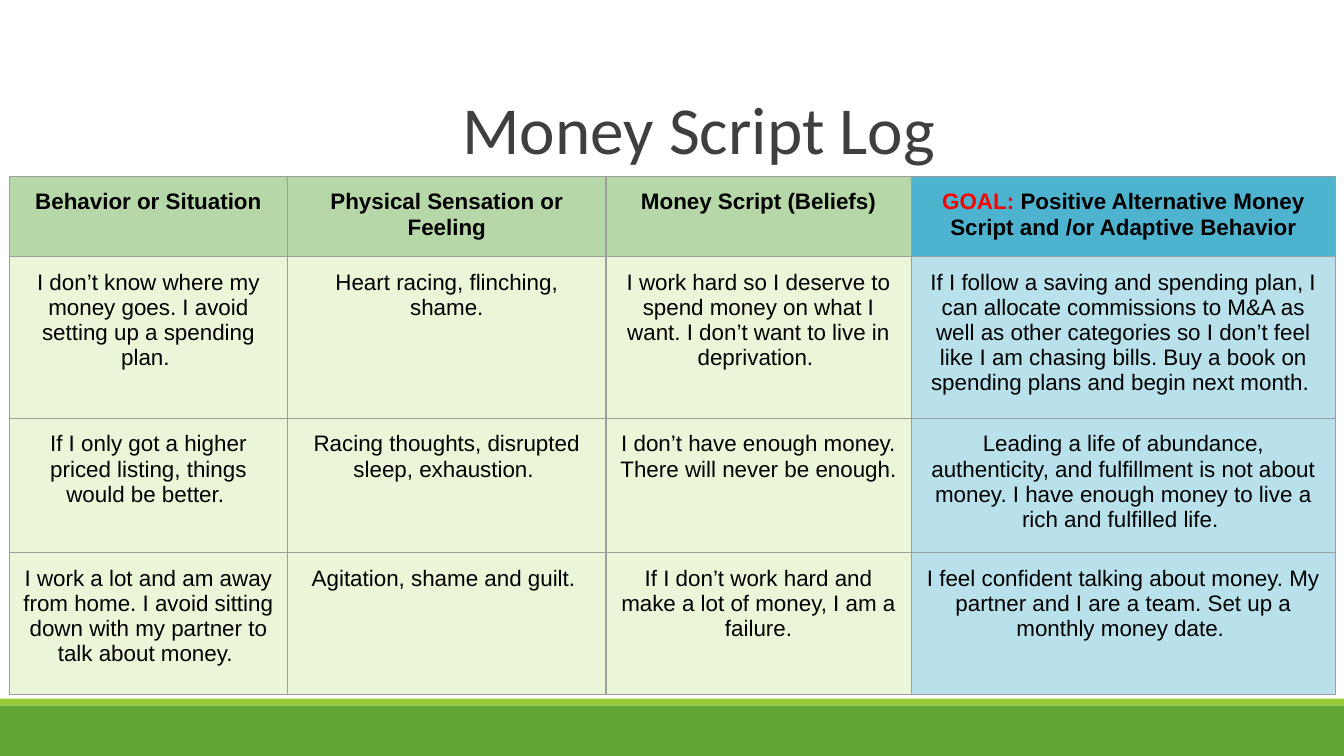
from dataclasses import dataclass

from lxml import etree
from pptx import Presentation
from pptx.dml.color import RGBColor
from pptx.enum.shapes import MSO_SHAPE
from pptx.enum.text import MSO_ANCHOR, PP_ALIGN
from pptx.oxml.ns import qn
from pptx.slide import Slide
from pptx.util import Inches, Length, Pt

RECTANGLE = MSO_SHAPE.RECTANGLE
TOP = MSO_ANCHOR.TOP
CENTER = PP_ALIGN.CENTER

SLIDE_WIDTH, SLIDE_HEIGHT = Inches(10), Inches(5.625)
INSET = Inches(0.1)


@dataclass(frozen=True)
class Theme:
    title_font: str = "Calibri"
    table_font: str = "Arial"
    title_size: int = 36
    table_size: int = 12
    border_width: float = 0.75
    title: str = "3F3F3F"
    ink: str = "000000"
    goal: str = "FF0000"
    border: str = "9E9E9E"
    header: str = "B6D7A8"
    goal_header: str = "4EB3CF"
    entry: str = "EBF5D7"
    goal_entry: str = "B8E1EC"
    band: str = "63A537"
    stripe: str = "99CB38"


@dataclass(frozen=True)
class Area:
    """A place given in percent of the slide's width and height."""
    left: float
    top: float
    width: float
    height: float

    def box(self) -> tuple[Length, Length, Length, Length]:
        return (across(self.left), down(self.top),
                across(self.width), down(self.height))


@dataclass(frozen=True)
class Words:
    text: str
    color: str
    bold: bool = False


THEME = Theme()

# Percent of the slide's width for columns and of its height for rows
COLUMNS = (20.7, 23.7, 22.7, 31.6)
ROWS = (10, 20.1, 16.8, 18.8)
LOG_AREA = Area(0.7, 23.3, sum(COLUMNS), sum(ROWS))
TITLE_AREA = Area(5.4, 11.4, 93.2, 9.1)
FOOTER = (
    (Area(0, 93.3, 100, 6.7), THEME.band),
    (Area(0, 92.4, 100, 0.9), THEME.stripe),
)

HEADINGS = (
    "Behavior or Situation",
    "Physical Sensation or Feeling",
    "Money Script (Beliefs)",
    "Positive Alternative Money Script and /or Adaptive Behavior",
)
ENTRIES = (
    (
        "I don’t know where my money goes. I avoid setting up a spending plan. ",
        "Heart racing, flinching, shame.",
        "I work hard so I deserve to spend money on what I want. "
        "I don’t want to live in deprivation. ",
        "If I follow a saving and spending plan, I can allocate commissions to "
        "M&A as well as other categories so I don’t feel like I am chasing "
        "bills. Buy a book on spending plans and begin next month. ",
    ),
    (
        "If I only got a higher priced listing, things would be better. ",
        "Racing thoughts, disrupted sleep, exhaustion. ",
        "I don’t have enough money. There will never be enough. ",
        "Leading a life of abundance, authenticity, and fulfillment is not about "
        "money. I have enough money to live a rich and fulfilled life. ",
    ),
    (
        "I work a lot and am away from home. I avoid sitting down with my "
        "partner to talk about money. ",
        "Agitation, shame and guilt. ",
        "If I don’t work hard and make a lot of money, I am a failure.",
        "I feel confident talking about money. My partner and I are a team. "
        "Set up a monthly money date. ",
    ),
)


def across(percent: float) -> Length:
    return Length(round(SLIDE_WIDTH * percent / 100))


def down(percent: float) -> Length:
    return Length(round(SLIDE_HEIGHT * percent / 100))


def write(frame, words: list[Words], font: str, size: int) -> None:
    frame.word_wrap = True
    paragraph = frame.paragraphs[0]
    paragraph.alignment = CENTER
    for part in words:
        run = paragraph.add_run()
        run.text = part.text
        run.font.name = font
        run.font.size = Pt(size)
        run.font.bold = part.bold
        run.font.color.rgb = RGBColor.from_string(part.color)


def draw_bar(slide: Slide, area: Area, color: str) -> None:
    bar = slide.shapes.add_shape(RECTANGLE, *area.box())
    bar.shadow.inherit = False
    bar.fill.solid()
    bar.fill.fore_color.rgb = RGBColor.from_string(color)
    bar.line.fill.background()


def draw_title(slide: Slide, text: str) -> None:
    frame = slide.shapes.add_textbox(*TITLE_AREA.box()).text_frame
    frame.margin_left = frame.margin_right = INSET
    frame.margin_top = frame.margin_bottom = INSET
    frame.vertical_anchor = TOP
    write(frame, [Words(text, THEME.title)], THEME.title_font, THEME.title_size)
    frame.paragraphs[0].line_spacing = 0.85


def add_borders(cell) -> None:
    properties = cell._tc.get_or_add_tcPr()
    for side in ("a:lnL", "a:lnR", "a:lnT", "a:lnB"):
        edge = etree.SubElement(properties, qn(side), w=str(Pt(THEME.border_width)))
        fill = etree.SubElement(edge, qn("a:solidFill"))
        etree.SubElement(fill, qn("a:srgbClr"), val=THEME.border)


def fill_cell(cell, words: list[Words], color: str) -> None:
    cell.margin_left = cell.margin_right = INSET
    cell.margin_top = cell.margin_bottom = INSET
    cell.vertical_anchor = TOP
    add_borders(cell)
    cell.fill.solid()
    cell.fill.fore_color.rgb = RGBColor.from_string(color)
    write(cell.text_frame, words, THEME.table_font, THEME.table_size)


def draw_log(slide: Slide) -> None:
    log = slide.shapes.add_table(len(ROWS), len(COLUMNS), *LOG_AREA.box()).table
    for column, share in zip(log.columns, COLUMNS):
        column.width = across(share)
    for row, share in zip(log.rows, ROWS):
        row.height = down(share)

    goal_column = len(COLUMNS) - 1
    for c, heading in enumerate(HEADINGS):
        words = [Words(heading, THEME.ink, bold=True)]
        if c == goal_column:
            words.insert(0, Words("GOAL: ", THEME.goal, bold=True))
        color = THEME.goal_header if c == goal_column else THEME.header
        fill_cell(log.cell(0, c), words, color)

    for r, entry in enumerate(ENTRIES, start=1):
        for c, text in enumerate(entry):
            color = THEME.goal_entry if c == goal_column else THEME.entry
            fill_cell(log.cell(r, c), [Words(text, THEME.ink)], color)


def main() -> None:
    deck = Presentation()
    deck.slide_width, deck.slide_height = SLIDE_WIDTH, SLIDE_HEIGHT
    slide = deck.slides.add_slide(deck.slide_layouts[6])

    # Footer bars
    for area, color in FOOTER:
        draw_bar(slide, area, color)

    # Title and log table
    draw_title(slide, "Money Script Log")
    draw_log(slide)

    deck.save("out.pptx")


if __name__ == "__main__":
    main()
